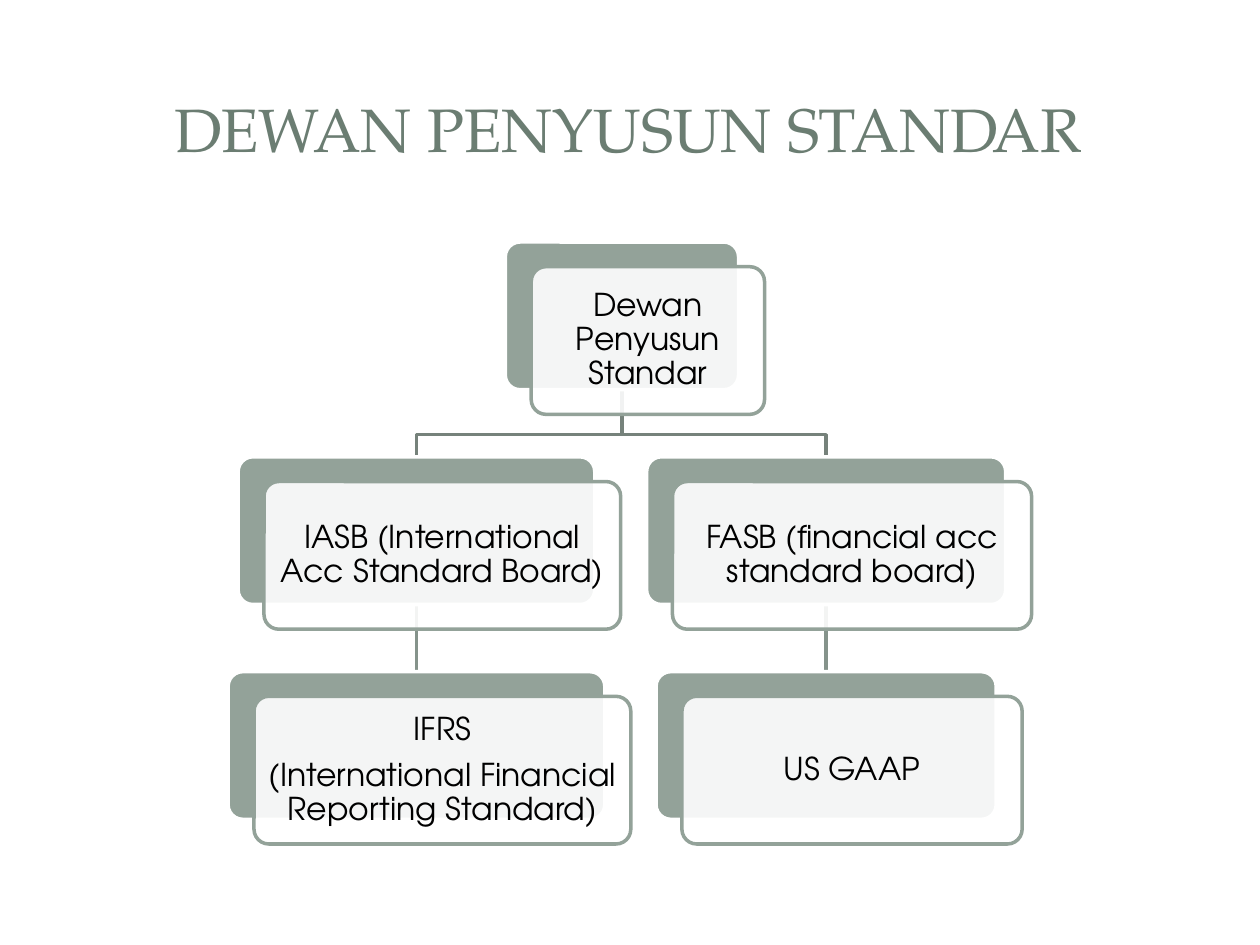
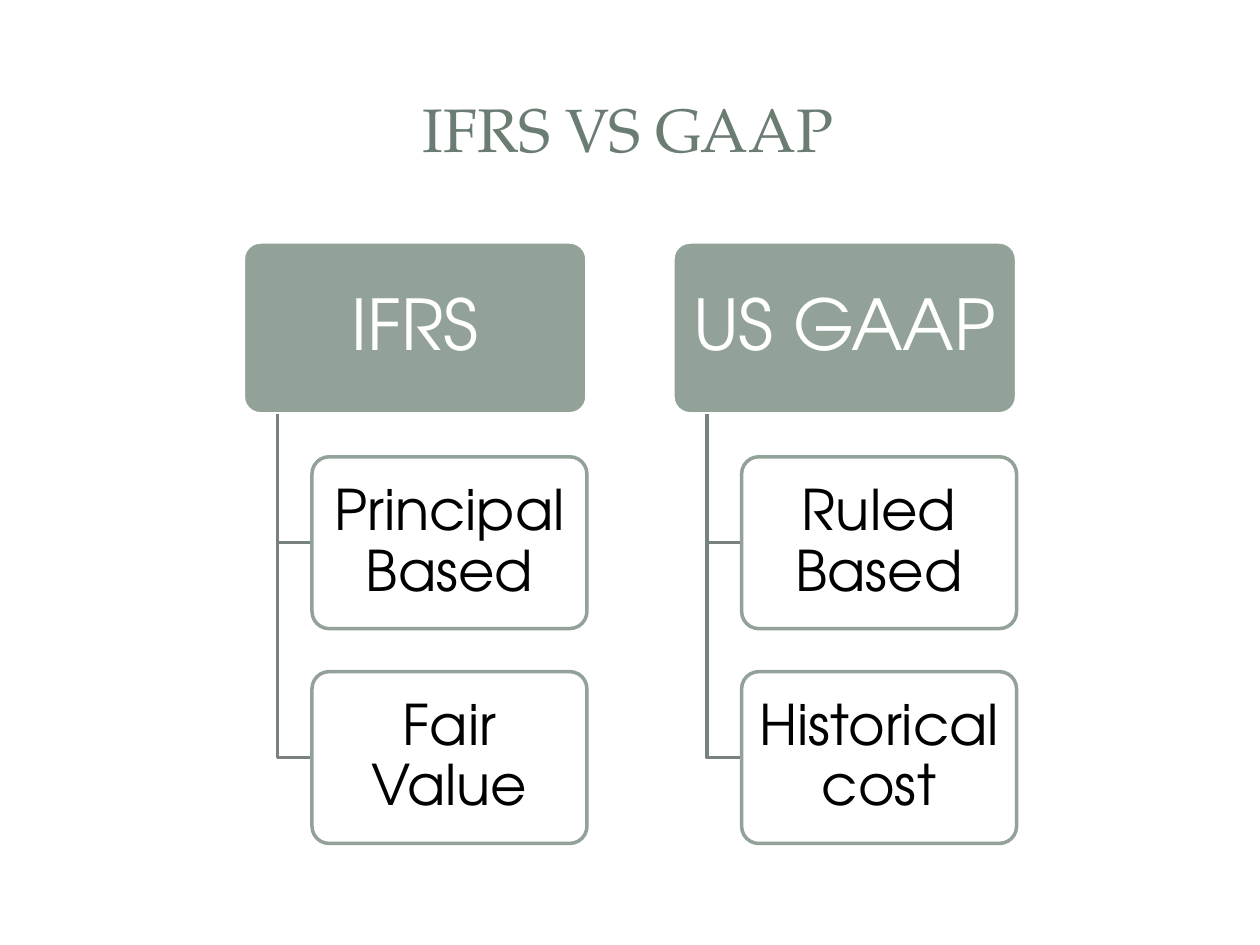
from pptx import Presentation
from pptx.dml.color import RGBColor
from pptx.enum import shapes, text
from pptx.oxml import ns
from pptx.util import Pt
from lxml import etree

SAGE = RGBColor(0x93, 0xA2, 0x99)
MOSS = RGBColor(0x6B, 0x7D, 0x72)
FORK = RGBColor(0x76, 0x82, 0x7B)
STEM = RGBColor(0x85, 0x93, 0x8B)
WHITE = RGBColor(0xFF, 0xFF, 0xFF)
BLACK = RGBColor(0, 0, 0)
SERIF, SANS = "TeX Gyre Pagella", "TeX Gyre Adventor"

TOP, STEP = 138.3, 122.75  # first row and row pitch of both diagrams


def write(shape, words, size, color=BLACK, font=SANS, pad=(7.2, 3.6),
          lead=0.9, after=0.38):
    """Centred text; each line of words is a paragraph."""
    frame = shape.text_frame
    frame.word_wrap = True
    frame.vertical_anchor = text.MSO_ANCHOR.MIDDLE
    frame.margin_left = frame.margin_right = Pt(pad[0])
    frame.margin_top = frame.margin_bottom = Pt(pad[1])
    frame.text = words
    for para in frame.paragraphs:
        para.alignment = text.PP_ALIGN.CENTER
        para.line_spacing = lead
        para.space_after = Pt(round(after * size))
        para.font.size = Pt(size)
        para.font.name = font
        para.font.color.rgb = color


def box(slide, x, y, w, h, fill, edge, alpha=None):
    """Rounded box, with the fill's opacity in percent if given."""
    shape = slide.shapes.add_shape(shapes.MSO_SHAPE.ROUNDED_RECTANGLE,
                                   Pt(x), Pt(y), Pt(w), Pt(h))
    shape.adjustments[0] = 0.1
    shape.shadow.inherit = False
    shape.fill.solid()
    shape.fill.fore_color.rgb = fill
    shape.line.color.rgb = edge
    shape.line.width = Pt(2)
    if alpha:
        tint = shape.element.spPr.find(ns.qn("a:solidFill"))[0]
        etree.SubElement(tint, ns.qn("a:alpha"), val=str(alpha * 1000))
    return shape


def card(slide, x, y, w, h):
    return box(slide, x, y, w, h, WHITE, SAGE, alpha=90)


def bend(slide, *points):
    """Open line through the points."""
    spots = [(Pt(x), Pt(y)) for x, y in points]
    path = slide.shapes.build_freeform(*spots[0])
    path.add_line_segments(spots[1:], close=False)
    line = path.convert_to_shape()
    line.shadow.inherit = False
    line.fill.background()
    line.line.color.rgb = FORK
    line.line.width = Pt(2)


def link(slide, start, end):
    """Straight line from the foot of one box to the head of another."""
    line = slide.shapes.add_connector(shapes.MSO_CONNECTOR.STRAIGHT, 0, 0, 0, 0)
    line.begin_connect(start, 2)
    line.end_connect(end, 0)
    line.line.color.rgb = STEM
    line.line.width = Pt(2)
    etree.SubElement(line.element.spPr, ns.qn("a:effectLst"))
    # Send to back, just after the two property nodes of the tree
    line.element.getparent().insert(2, line.element)


def start(deck, title):
    """Blank slide with the shared title."""
    slide = deck.slides.add_slide(deck.slide_layouts[6])
    head = slide.shapes.add_textbox(Pt(33.8), Pt(32.4), Pt(650.2), Pt(82.1))
    write(head, title, 35, MOSS, SERIF, lead=1, after=0)
    return slide


def boards(deck):
    """Tree of the boards and their standards."""
    slide = start(deck, "DEWAN PENYUSUN STANDAR")
    high, mid, left, right = 84.4, 355.4, 238, 472.1
    foot = TOP + high
    for x in (right, left):
        bend(slide, (mid, foot), (mid, 248.4), (x, 248.4), (x, TOP + STEP))

    def node(words, x, row, wide):
        x, y = x - wide / 2, TOP + row * STEP
        back = box(slide, x, y, wide, high, SAGE, WHITE)
        front = card(slide, x + 14.8, y + 14.1, wide, high)
        write(front, words, 18, pad=(5, 5))
        return back

    node("Dewan Penyusun Standar", mid, 0, 133.3)
    iasb = node("IASB (International Acc Standard Board)", left, 1, 203.8)
    ifrs = node("IFRS\n(International Financial Reporting Standard)",
                left, 2, 215.3)
    fasb = node("FASB (financial acc standard board)", right, 1, 205.2)
    gaap = node("US GAAP", right, 2, 194.4)
    link(slide, iasb, ifrs)
    link(slide, fasb, gaap)


def versus(deck):
    """Two columns, each a head with its traits below."""
    slide = start(deck, "IFRS VS GAAP")
    wide, high = 196.4, 98.2
    columns = (("IFRS", "Principal Based", "Fair Value"),
               ("US GAAP", "Ruled Based", "Historical cost"))
    for col, (name, *traits) in enumerate(columns):
        x = 139 + col * 245.5
        head = box(slide, x, TOP, wide, high, SAGE, WHITE)
        write(head, name, 40, WHITE, pad=(5.6, 4))
        spine, inner = x + wide / 10, x + wide / 5
        for row, trait in enumerate(traits, 1):
            y = TOP + row * STEP
            bend(slide, (spine, TOP + high), (spine, y + high / 2),
                 (inner, y + high / 2))
            item = card(slide, inner, y, wide * 0.8, high)
            write(item, trait, 32, pad=(4.8, 3.2))


def main():
    deck = Presentation()
    deck.slide_width, deck.slide_height = Pt(720), Pt(540)
    boards(deck)
    versus(deck)
    deck.save("out.pptx")


if __name__ == "__main__":
    main()
